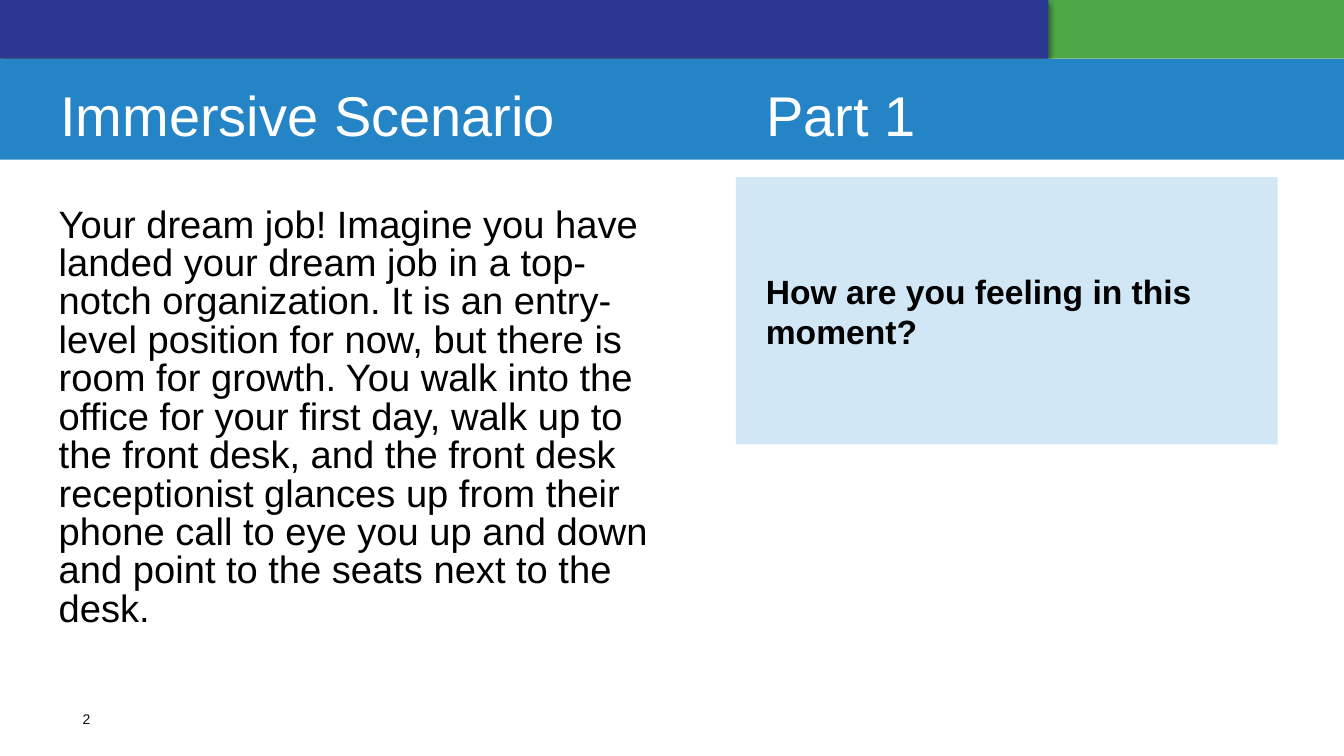
import pptx
import pptx.util
import pptx.dml.color
import pptx.enum.shapes
import pptx.enum.text
import pptx.oxml
from dataclasses import dataclass
from lxml import etree

ALIGN = pptx.enum.text.PP_ALIGN
ANCHOR = pptx.enum.text.MSO_ANCHOR


@dataclass(frozen=True)
class Theme:
    font: str = "Arial"
    green: str = "4EA848"
    navy: str = "2B3890"
    blue: str = "2484C6"
    pale: str = "D1E7F6"
    white: str = "FFFFFF"
    black: str = "000000"
    soft_black: str = "0C0C0C"
    title_size: float = 40
    story_size: float = 27.2
    question_size: float = 24
    number_size: float = 10


class ScenarioSlide:
    COLUMNS, ROWS = 160, 90

    def __init__(self, deck, theme):
        self.theme = theme
        self.slide = deck.slides.add_slide(deck.slide_layouts[6])
        self.column = deck.slide_width / self.COLUMNS
        self.row = deck.slide_height / self.ROWS

    def place(self, left, top, width, height):
        return (round(left * self.column), round(top * self.row),
                round(width * self.column), round(height * self.row))

    def band(self, cell, color, shadow=False):
        band = self.slide.shapes.add_shape(
            pptx.enum.shapes.MSO_SHAPE.RECTANGLE, *self.place(*cell))
        band.shadow.inherit = False
        band.fill.solid()
        band.fill.fore_color.rgb = pptx.dml.color.RGBColor.from_string(color)
        band.line.fill.background()
        if shadow:
            self.cast_shadow(band)
        return band

    def cast_shadow(self, band):
        effects = band.element.spPr.find(pptx.oxml.ns.qn("a:effectLst"))
        shadow = etree.SubElement(
            effects, pptx.oxml.ns.qn("a:outerShdw"),
            blurRad=str(pptx.util.Pt(4)), dist=str(pptx.util.Pt(2)),
            dir=str(45 * 60000), algn="tl", rotWithShape="0")
        tint = etree.SubElement(shadow, pptx.oxml.ns.qn("a:srgbClr"), val=self.theme.black)
        etree.SubElement(tint, pptx.oxml.ns.qn("a:alpha"), val="40000")

    def text(self, cell, words, size, color, **style):
        box = self.slide.shapes.add_textbox(*self.place(*cell))
        self.fill_text(box, words, size, color, **style)

    def fill_text(self, holder, words, size, color, insets=(0, 0, 0, 0), anchor=ANCHOR.TOP,
                  align=ALIGN.LEFT, bold=False, spacing=None, tab=None):
        frame = holder.text_frame
        frame.word_wrap = True
        frame.vertical_anchor = anchor
        (frame.margin_left, frame.margin_top,
         frame.margin_right, frame.margin_bottom) = map(pptx.util.Inches, insets)
        paragraph = frame.paragraphs[0]
        paragraph.alignment = align
        if spacing:
            paragraph.line_spacing = spacing
        if tab:
            stops = etree.SubElement(
                paragraph._p.get_or_add_pPr(), pptx.oxml.ns.qn("a:tabLst"))
            etree.SubElement(stops, pptx.oxml.ns.qn("a:tab"),
                             pos=str(round(tab * self.column)), algn="l")
        run = paragraph.add_run()
        run.text = words
        run.font.name = self.theme.font
        run.font.size = pptx.util.Pt(size)
        run.font.bold = bold
        run.font.color.rgb = pptx.dml.color.RGBColor.from_string(color)


def main():
    deck = pptx.Presentation()
    deck.slide_width = pptx.util.Inches(13.33)
    deck.slide_height = pptx.util.Inches(7.5)
    theme = Theme()
    page = ScenarioSlide(deck, theme)

    page.band((0, 0, 160, 7), theme.green)
    page.band((0, 0, 124.8, 7), theme.navy, shadow=True)
    page.band((87.6, 21.1, 64.5, 31.8), theme.pale)
    page.text((8.3, 83.2, 4, 4.8), "2", theme.number_size, theme.soft_black,
              insets=(0, 0.05, 0, 0.05), anchor=ANCHOR.MIDDLE, align=ALIGN.CENTER)

    title = page.band((0, 7, 160, 12), theme.blue)
    page.fill_text(title, "Immersive Scenario\tPart 1", theme.title_size, theme.white,
                   insets=(0.6, 0.1, 0, 0), anchor=ANCHOR.MIDDLE, tab=84)

    page.text((4, 24.7, 74.2, 58.6),
              "Your dream job! Imagine you have landed your dream job in a top-notch "
              "organization. It is an entry-level position for now, but there is room for "
              "growth. You walk into the office for your first day, walk up to the front "
              "desk, and the front desk receptionist glances up from their phone call to "
              "eye you up and down and point to the seats next to the desk.",
              theme.story_size, theme.black, insets=(0.25, 0, 0, 0), spacing=0.84)
    page.text((90, 31.6, 62, 10.9), "How are you feeling in this moment?",
              theme.question_size, theme.black, insets=(0.1, 0.05, 0.1, 0.05), bold=True)

    deck.save("out.pptx")


if __name__ == "__main__":
    main()
